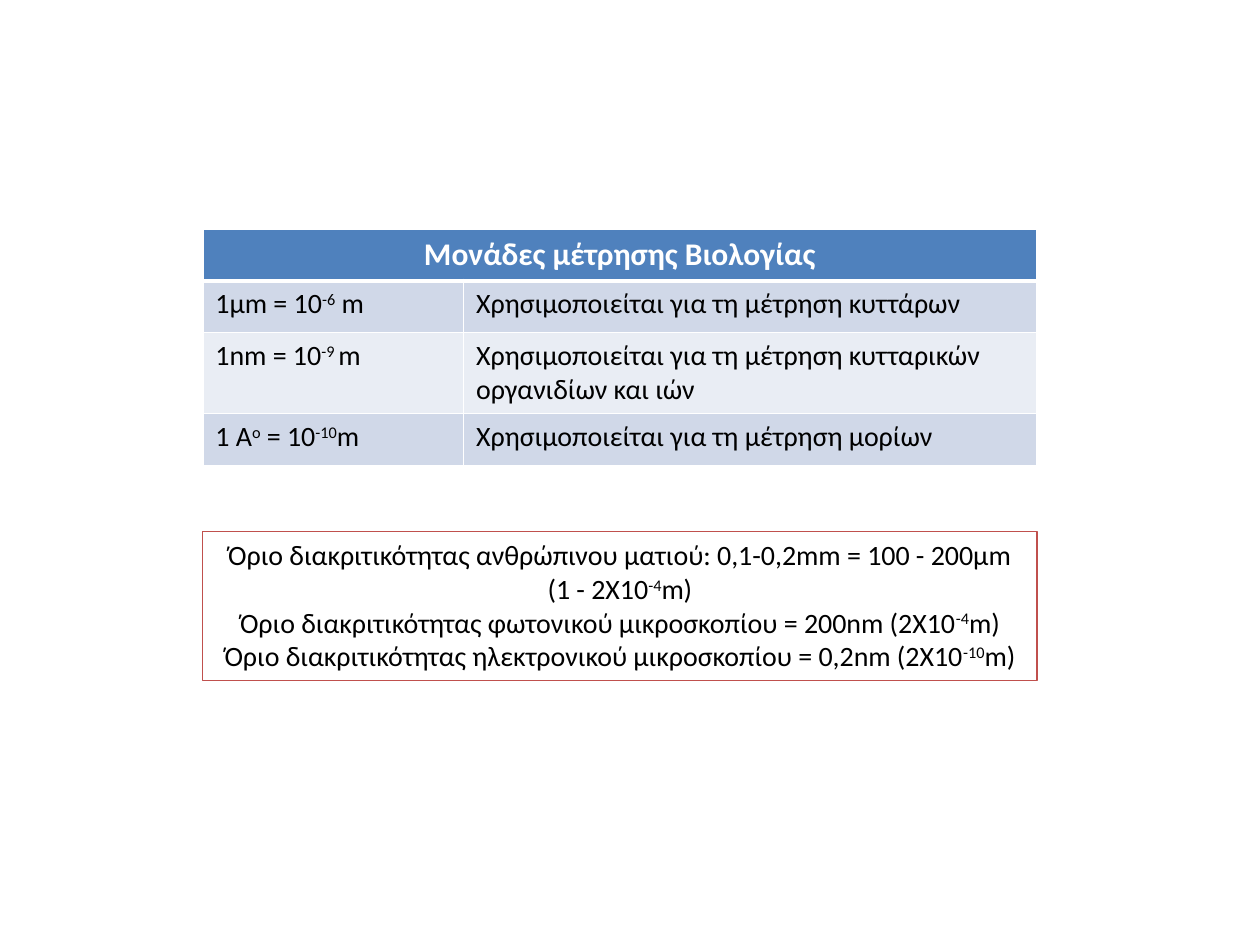
from lxml.etree import SubElement
from pptx import Presentation
from pptx.dml.color import RGBColor
from pptx.enum.shapes import MSO_SHAPE
from pptx.enum.text import MSO_ANCHOR, PP_ALIGN
from pptx.oxml.ns import qn
from pptx.util import Inches, Pt

# Content: text between two ^ marks is superscript
HEADING = "Μονάδες μέτρησης Βιολογίας"
UNITS = [
    ("1μm = 10^-6^ m", "Χρησιμοποιείται για τη μέτρηση κυττάρων"),
    ("1nm = 10^-9 ^m", "Χρησιμοποιείται για τη μέτρηση κυτταρικών οργανιδίων και ιών"),
    ("1 A^o^ = 10^-10^m", "Χρησιμοποιείται για τη μέτρηση μορίων"),
]
LIMITS = [
    "Όριο διακριτικότητας ανθρώπινου ματιού: 0,1-0,2mm = 100 - 200μm (1 - 2X10^-4^m)",
    "Όριο διακριτικότητας φωτονικού μικροσκοπίου = 200nm (2X10^-4^m)",
    "Όριο διακριτικότητας ηλεκτρονικού μικροσκοπίου = 0,2nm (2X10^-10^m)",
]
BLACK, WHITE, BLUE, RED = "000000", "FFFFFF", "4F81BD", "C0504D"
BANDS = ["D0D8E8", "E9EDF4"]

# Layout in inches
LEFT, WIDTH = 1.61, 6.62
TABLE_TOP, ROW_HEIGHT = 1.82, 0.41
COLUMNS = [2.07, 4.55]
LIMITS_TOP, LIMITS_HEIGHT = 4.22, 1.18


def color(hex_value):
    return RGBColor.from_string(hex_value)


def write(paragraph, marked_text, size=16, hex_value=BLACK, bold=False,
          align=PP_ALIGN.LEFT):
    paragraph.alignment = align
    for index, part in enumerate(marked_text.split("^")):
        run = paragraph.add_run()
        run.text = part
        run.font.name = "Calibri"
        run.font.size = Pt(size)
        run.font.bold = bold
        run.font.color.rgb = color(hex_value)
        if index % 2:
            run.font._element.set("baseline", "30000")


def style_cell(cell, fill, top=1, bottom=1):
    properties = cell._tc.get_or_add_tcPr()
    for side, points in (("L", 1), ("R", 1), ("T", top), ("B", bottom)):
        border = SubElement(properties, qn(f"a:ln{side}"), w=str(Pt(points)))
        paint = SubElement(border, qn("a:solidFill"))
        SubElement(paint, qn("a:srgbClr"), val=WHITE)
    cell.fill.solid()
    cell.fill.fore_color.rgb = color(fill)


def add_units(slide):
    row_count = len(UNITS) + 1
    table = slide.shapes.add_table(
        row_count, len(COLUMNS), Inches(LEFT), Inches(TABLE_TOP),
        Inches(WIDTH), Inches(ROW_HEIGHT * row_count)).table
    for column, width in zip(table.columns, COLUMNS):
        column.width = Inches(width)

    # Heading across both columns
    heading = table.cell(0, 0)
    heading.merge(table.cell(0, 1))
    for cell in table.rows[0].cells:
        style_cell(cell, BLUE, bottom=3)
    write(heading.text_frame.paragraphs[0], HEADING, 18, WHITE, True,
          PP_ALIGN.CENTER)

    # One banded row per unit
    for row, unit in enumerate(UNITS, 1):
        for column, entry in enumerate(unit):
            cell = table.cell(row, column)
            style_cell(cell, BANDS[(row - 1) % 2], top=3 if row == 1 else 1)
            write(cell.text_frame.paragraphs[0], entry)


def add_limits(slide):
    limits = slide.shapes.add_shape(
        MSO_SHAPE.RECTANGLE, Inches(LEFT), Inches(LIMITS_TOP),
        Inches(WIDTH), Inches(LIMITS_HEIGHT))
    limits.shadow.inherit = False
    limits.fill.background()
    limits.line.color.rgb = color(RED)
    limits.line.width = Pt(0.75)
    frame = limits.text_frame
    frame.word_wrap = True
    frame.vertical_anchor = MSO_ANCHOR.TOP
    for index, limit in enumerate(LIMITS):
        paragraph = frame.add_paragraph() if index else frame.paragraphs[0]
        write(paragraph, limit, align=PP_ALIGN.CENTER)


def main():
    presentation = Presentation()
    presentation.slide_width = Inches(10)
    presentation.slide_height = Inches(7.5)
    slide = presentation.slides.add_slide(presentation.slide_layouts[6])
    add_units(slide)
    add_limits(slide)
    presentation.save("out.pptx")


if __name__ == "__main__":
    main()
